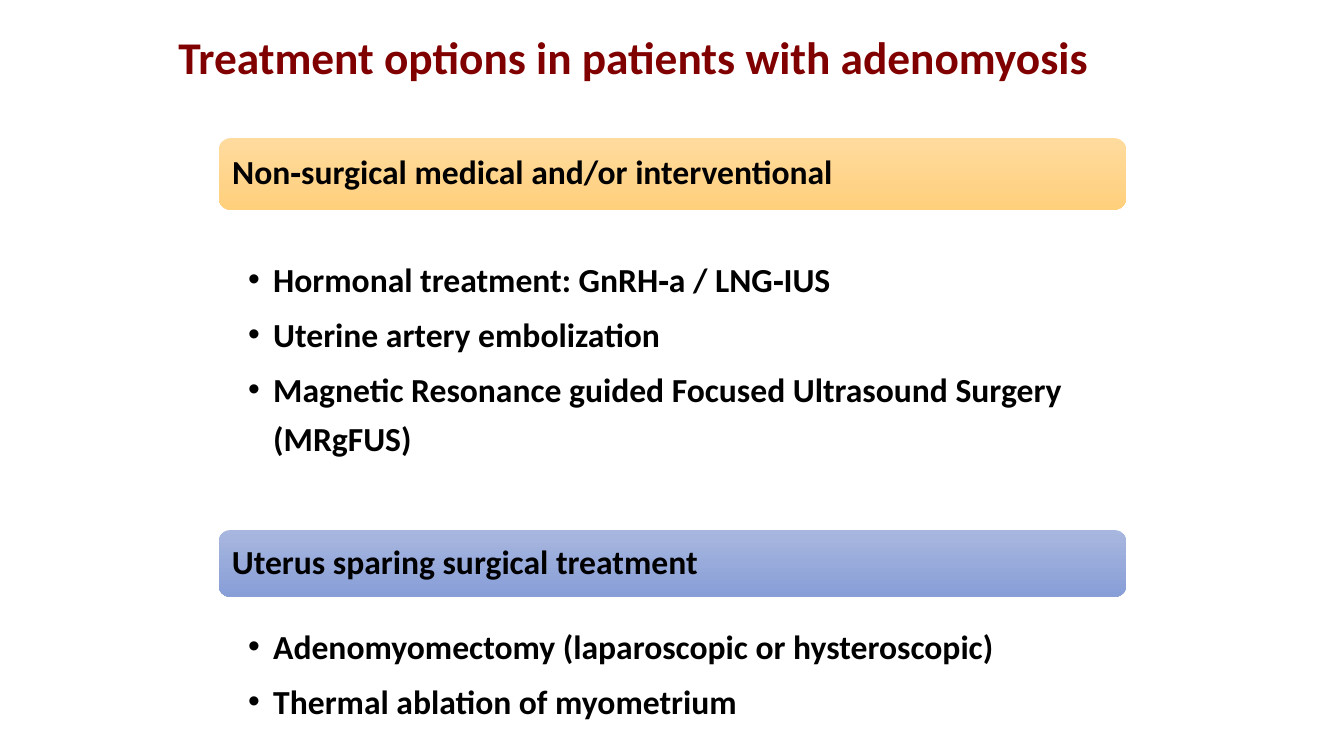
from dataclasses import dataclass

from lxml import etree
from pptx import Presentation
from pptx.dml.color import RGBColor
from pptx.enum.shapes import MSO_SHAPE
from pptx.enum.text import MSO_ANCHOR, PP_ALIGN
from pptx.oxml.ns import qn
from pptx.util import Pt

EMU_PER_PX = 9144  # 100 px to the inch
ROUNDED = MSO_SHAPE.ROUNDED_RECTANGLE
TOP, MIDDLE = MSO_ANCHOR.TOP, MSO_ANCHOR.MIDDLE
LEFT = PP_ALIGN.LEFT

FONT = "Calibri"
BLACK = RGBColor(0x00, 0x00, 0x00)
MAROON = RGBColor(0x80, 0x00, 0x00)
AMBER_LIGHT, AMBER = RGBColor(0xFF, 0xDB, 0x9E), RGBColor(0xFF, 0xD0, 0x7C)
BLUE_LIGHT, BLUE = RGBColor(0xA8, 0xB7, 0xDF), RGBColor(0x88, 0x9E, 0xD7)

SECTION_LEFT, SECTION_WIDTH = 217, 900
BODY_SIZE = 24
BULLET_INDENT = 25


@dataclass(frozen=True)
class Section:
    heading: str
    top: int
    height: int
    light: RGBColor
    dark: RGBColor
    list_top: int
    list_height: int
    options: tuple[str, ...]


SECTIONS = (
    Section("Non‐surgical medical and/or interventional", 137, 71, AMBER_LIGHT, AMBER, 246, 217, (
        "Hormonal treatment: GnRH‐a / LNG‐IUS",
        "Uterine artery embolization",
        "Magnetic Resonance guided Focused Ultrasound Surgery (MRgFUS)",
    )),
    Section("Uterus sparing surgical treatment", 526, 66, BLUE_LIGHT, BLUE, 610, 118, (
        "Adenomyomectomy (laparoscopic or hysteroscopic)",
        "Thermal ablation of myometrium",
    )),
)


def px(n: int) -> int:
    return n * EMU_PER_PX


def set_frame(tf, anchor, left: int, top: int, right: int, bottom: int) -> None:
    """Wrap the text, anchor it and set its insets in px."""
    tf.word_wrap = True
    tf.vertical_anchor = anchor
    tf.margin_left, tf.margin_top = px(left), px(top)
    tf.margin_right, tf.margin_bottom = px(right), px(bottom)


def format_paragraph(p, size: float, color: RGBColor, spacing: float) -> None:
    p.alignment = LEFT
    p.line_spacing = spacing
    for r in p.runs:
        r.font.name = FONT
        r.font.size = Pt(size)
        r.font.bold = True
        r.font.color.rgb = color


def add_bullet(p) -> None:
    pPr = p._p.get_or_add_pPr()
    pPr.set("marL", str(px(BULLET_INDENT)))
    pPr.set("indent", str(-px(BULLET_INDENT)))
    etree.SubElement(pPr, qn("a:buFont")).set("typeface", "Arial")
    etree.SubElement(pPr, qn("a:buChar")).set("char", "•")


def add_title(slide, text: str) -> None:
    tf = slide.shapes.add_textbox(px(167), px(30), px(1000), px(125)).text_frame
    set_frame(tf, TOP, 10, 5, 10, 5)
    tf.text = text
    format_paragraph(tf.paragraphs[0], 32.4, MAROON, 0.9)


def add_heading(slide, section: Section) -> None:
    s = slide.shapes.add_shape(
        ROUNDED, px(SECTION_LEFT), px(section.top), px(SECTION_WIDTH), px(section.height))
    s.shadow.inherit = False
    s.line.fill.background()
    s.fill.gradient()
    s.fill.gradient_angle = 270
    for stop, color in zip(s.fill.gradient_stops, (section.light, section.dark)):
        stop.color.rgb = color
    tf = s.text_frame
    set_frame(tf, MIDDLE, 10, 10, 10, 10)
    tf.text = section.heading
    format_paragraph(tf.paragraphs[0], BODY_SIZE, BLACK, 0.9)


def add_options(slide, section: Section) -> None:
    tf = slide.shapes.add_textbox(
        px(SECTION_LEFT), px(section.list_top), px(SECTION_WIDTH), px(section.list_height)).text_frame
    set_frame(tf, TOP, 29, 3, 19, 3)
    tf.text = "\n".join(section.options)
    for p in tf.paragraphs:
        add_bullet(p)
        format_paragraph(p, BODY_SIZE, BLACK, 1.2)
        p.space_after = Pt(BODY_SIZE * 0.2)


def main() -> None:
    prs = Presentation()
    prs.slide_width, prs.slide_height = px(1333), px(750)
    slide = prs.slides.add_slide(prs.slide_layouts[6])
    add_title(slide, "Treatment options in patients with adenomyosis")
    for section in SECTIONS:
        add_heading(slide, section)
        add_options(slide, section)
    prs.save("out.pptx")


if __name__ == "__main__":
    main()
